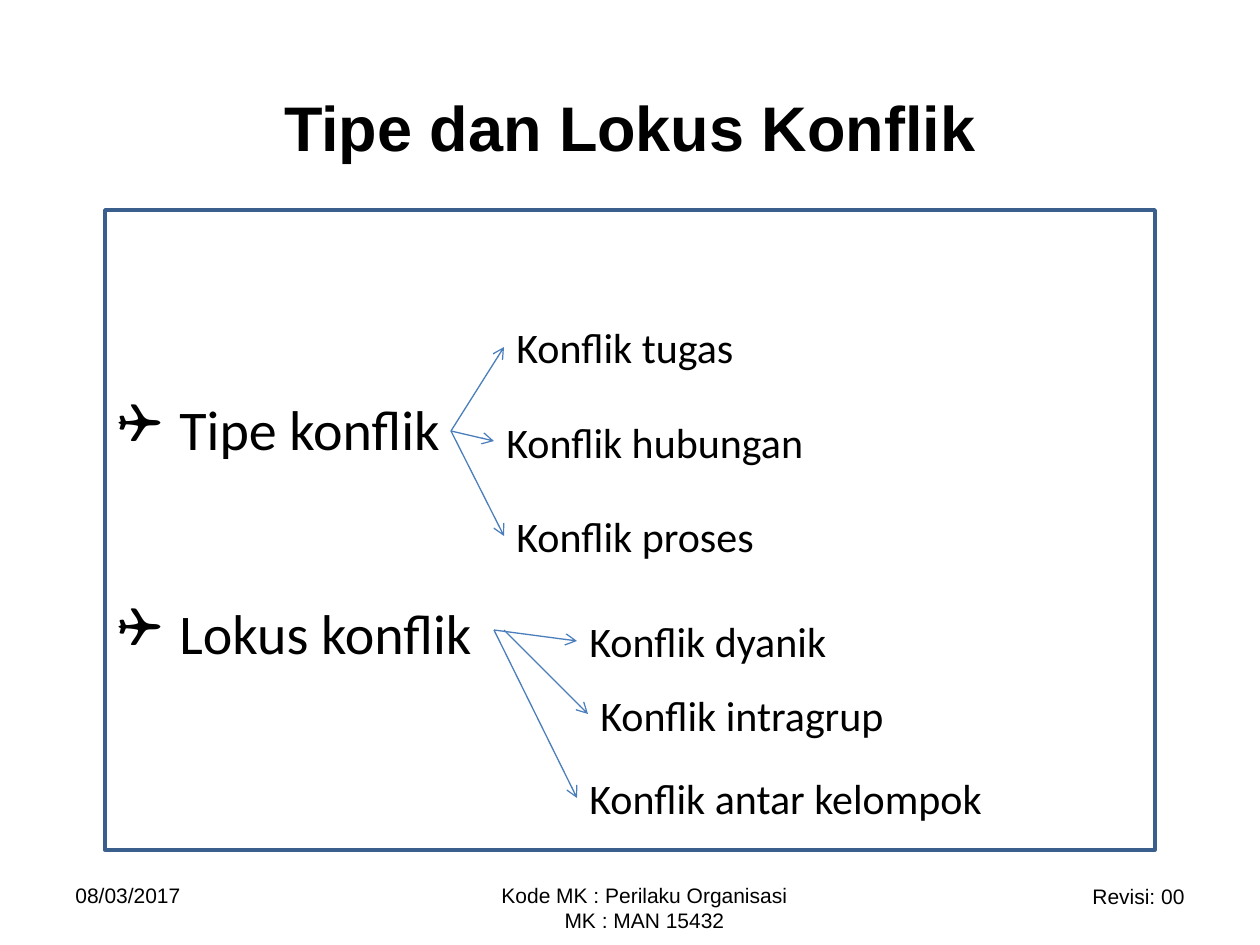
from lxml.etree import SubElement
from pptx import Presentation
from pptx.dml.color import RGBColor
from pptx.enum.shapes import MSO_CONNECTOR, MSO_SHAPE
from pptx.enum.text import MSO_ANCHOR, PP_ALIGN
from pptx.oxml.ns import qn
from pptx.util import Pt

EMU_PER_PX = 914400 / 126
BLACK = RGBColor(0x00, 0x00, 0x00)
WHITE = RGBColor(0xFF, 0xFF, 0xFF)
FRAME_BLUE = RGBColor(0x3A, 0x5F, 0x8C)
ARROW_BLUE = RGBColor(0x4B, 0x7E, 0xBC)


def px(length):
    """Turn pixels into EMU."""
    return round(length * EMU_PER_PX)


def write(frame, *lines, font="Calibri", size=24, bold=False, align=PP_ALIGN.LEFT,
          anchor=MSO_ANCHOR.TOP, bullet=None, hanging=0, gap=0):
    """Fill a text frame with one formatted paragraph for each line."""
    frame.word_wrap = True
    frame.vertical_anchor = anchor
    for index, line in enumerate(lines):
        paragraph = frame.paragraphs[0] if index == 0 else frame.add_paragraph()
        if bullet:
            properties = paragraph._p.get_or_add_pPr()
            properties.set("marL", str(px(hanging)))
            properties.set("indent", str(-px(hanging)))
            SubElement(properties, qn("a:buFont"), typeface="Wingdings")
            SubElement(properties, qn("a:buChar"), char=bullet)
        paragraph.alignment = align
        paragraph.space_before = Pt(gap if index else 0)
        run = paragraph.add_run()
        run.text = line
        run.font.name = font
        run.font.size = Pt(size)
        run.font.bold = bold
        run.font.color.rgb = BLACK


class SlideBuilder:
    """Hold the style and the current slide."""

    def __init__(self, slide):
        self.slide = slide
        self.shapes = slide.shapes

    def title(self, text, left, top, width, height):
        """Place and format the title placeholder."""
        title = self.shapes.title
        title.left, title.top, title.width, title.height = map(px, (left, top, width, height))
        write(title.text_frame, text, font="Arial", size=36, bold=True,
              align=PP_ALIGN.CENTER, anchor=MSO_ANCHOR.MIDDLE)

    def label(self, lines, left, top, width, height, **style):
        """Add a text box."""
        box = self.shapes.add_textbox(*map(px, (left, top, width, height)))
        write(box.text_frame, *lines, **style)

    def panel(self, lines, left, top, width, height, **style):
        """Add the framed rectangle with its text."""
        panel = self.shapes.add_shape(MSO_SHAPE.RECTANGLE, *map(px, (left, top, width, height)))
        panel.shadow.inherit = False
        panel.fill.solid()
        panel.fill.fore_color.rgb = WHITE
        panel.line.color.rgb = FRAME_BLUE
        panel.line.width = Pt(2)
        write(panel.text_frame, *lines, **style)

    def arrow(self, start, end):
        """Add a thin line with an open arrowhead at its end."""
        arrow = self.shapes.add_connector(MSO_CONNECTOR.STRAIGHT, *map(px, (*start, *end)))
        arrow.line.color.rgb = ARROW_BLUE
        arrow.line.width = Pt(0.75)
        SubElement(arrow.line._get_or_add_ln(), qn("a:tailEnd"), type="arrow")
        SubElement(arrow._element.spPr, qn("a:effectLst"))

    def branch(self, text, start, left, top, width, tip):
        """Add a branch label and the arrow that leads to its left edge."""
        self.label([text], left, top, width, 63)
        self.arrow(start, (left, tip))


def main():
    """Build and save the slide."""
    presentation = Presentation()
    presentation.slide_width, presentation.slide_height = px(1260), px(945)
    builder = SlideBuilder(presentation.slides.add_slide(presentation.slide_layouts[5]))

    builder.title("Tipe dan Lokus Konflik", 63, 63, 1134, 126)
    builder.panel(["Tipe konflik", "Lokus konflik"], 105, 210, 1050, 640, size=32,
                  anchor=MSO_ANCHOR.MIDDLE, bullet="❑", hanging=62, gap=78)

    type_origin = (451, 431)
    locus_origin = (494, 630)
    branches = [
        ("Konflik tugas", type_origin, 504, 315, 378, 347),
        ("Konflik hubungan", type_origin, 494, 410, 368, 441),
        ("Konflik proses", type_origin, 504, 504, 368, 536),
        ("Konflik dyanik", locus_origin, 577, 609, 315, 641),
        ("Konflik intragrup", (504, 630), 588, 683, 410, 714),
        ("Konflik antar kelompok", locus_origin, 577, 766, 431, 798),
    ]
    for branch in branches:
        builder.branch(*branch)

    footers = [
        (["08/03/2017"], 63, 876, 294, 50, PP_ALIGN.LEFT),
        (["Kode MK : Perilaku Organisasi", "MK : MAN 15432"], 431, 876, 427, 50, PP_ALIGN.CENTER),
        (["Revisi: 00"], 903, 877, 294, 38, PP_ALIGN.RIGHT),
    ]
    for lines, left, top, width, height, align in footers:
        builder.label(lines, left, top, width, height, font="Arial", size=12, align=align)

    presentation.save("out.pptx")


if __name__ == "__main__":
    main()
